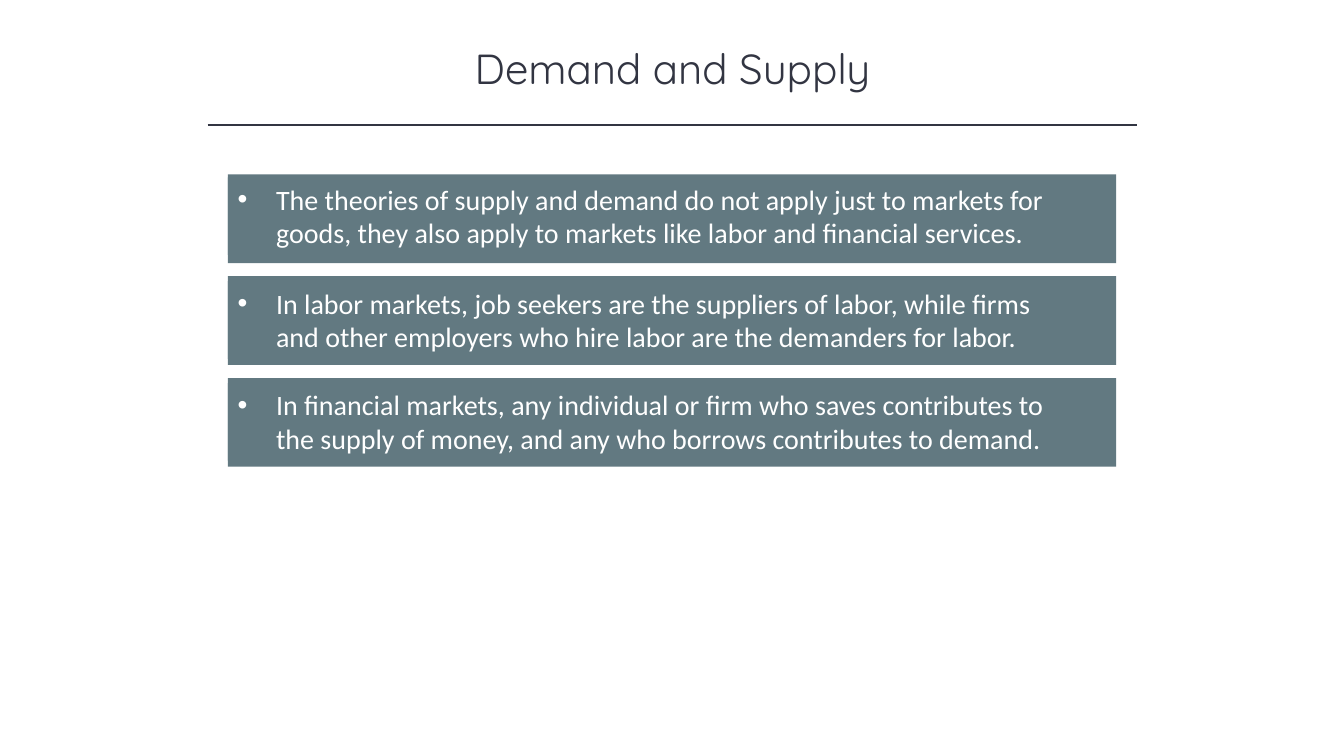
import pptx
import pptx.dml.color
import pptx.enum.shapes
import pptx.enum.text
import pptx.oxml.ns
import pptx.util
from lxml import etree

Inches = pptx.util.Inches
Pt = pptx.util.Pt
qn = pptx.oxml.ns.qn

INK = pptx.dml.color.RGBColor(0x32, 0x35, 0x42)
SLATE = pptx.dml.color.RGBColor(0x62, 0x79, 0x81)
WHITE = pptx.dml.color.RGBColor(0xFF, 0xFF, 0xFF)

LEFT = 2.26
PANEL_TOP = 1.73
PANEL_PITCH = 1.01
POINTS = [
    (0.03, "The theories of supply and demand do not apply just to markets for goods, "
           "they also apply to markets like labor and financial services."),
    (0.05, "In labor markets, job seekers are the suppliers of labor, while firms "
           "and other employers who hire labor are the demanders for labor."),
    (0.05, "In financial markets, any individual or firm who saves contributes to "
           "the supply of money, and any who borrows contributes to demand."),
]


def set_text(tf, text, size, font, color, align):
    tf.text = text
    tf.word_wrap = True
    tf.vertical_anchor = pptx.enum.text.MSO_ANCHOR.TOP
    p = tf.paragraphs[0]
    p.alignment = align
    f = p.runs[0].font
    f.size = Pt(size)
    f.name = font
    f.color.rgb = color
    return p


def add_title(s, text):
    sp = s.shapes.title
    sp.left, sp.top = Inches(1.67), Inches(0.37)
    sp.width, sp.height = Inches(10), Inches(0.61)
    set_text(sp.text_frame, text, 30, "Quicksand", INK, pptx.enum.text.PP_ALIGN.CENTER)
    sp.text_frame.auto_size = pptx.enum.text.MSO_AUTO_SIZE.NONE


def add_rule(s, left, right, y):
    line = s.shapes.add_connector(
        pptx.enum.shapes.MSO_CONNECTOR.STRAIGHT,
        Inches(left), Inches(y), Inches(right), Inches(y))
    line.line.color.rgb = INK
    line.line.width = Pt(1)
    etree.SubElement(line._element.spPr, qn("a:effectLst"))


def add_rect(shapes, top, width, height):
    sp = shapes.add_shape(
        pptx.enum.shapes.MSO_SHAPE.RECTANGLE,
        Inches(LEFT), Inches(top), Inches(width), Inches(height))
    sp.shadow.inherit = False
    sp.fill.solid()
    sp.fill.fore_color.rgb = SLATE
    sp.line.fill.background()
    return sp


def add_bullet(p, indent):
    pPr = p._p.get_or_add_pPr()
    pPr.set("marL", str(Inches(indent)))
    pPr.set("indent", str(-Inches(indent)))
    etree.SubElement(pPr, qn("a:buFont")).set("typeface", "Arial")
    etree.SubElement(pPr, qn("a:buChar")).set("char", "•")


def add_point(s, top, text_offset, text):
    shapes = s.shapes.add_group_shape().shapes
    add_rect(shapes, top, 8.81, 0.88)
    sp = add_rect(shapes, top + text_offset, 8.54, 0.77)
    p = set_text(sp.text_frame, text, 20, "Calibri", WHITE, pptx.enum.text.PP_ALIGN.LEFT)
    add_bullet(p, 0.38)


def main():
    prs = pptx.Presentation()
    prs.slide_width, prs.slide_height = Inches(13.33), Inches(7.5)
    s = prs.slides.add_slide(prs.slide_layouts.get_by_name("Title Only"))
    add_title(s, "Demand and Supply")
    add_rule(s, 2.06, 11.28, 1.24)
    for i, (text_offset, text) in enumerate(POINTS):
        add_point(s, PANEL_TOP + i * PANEL_PITCH, text_offset, text)
    prs.save("out.pptx")


if __name__ == "__main__":
    main()
